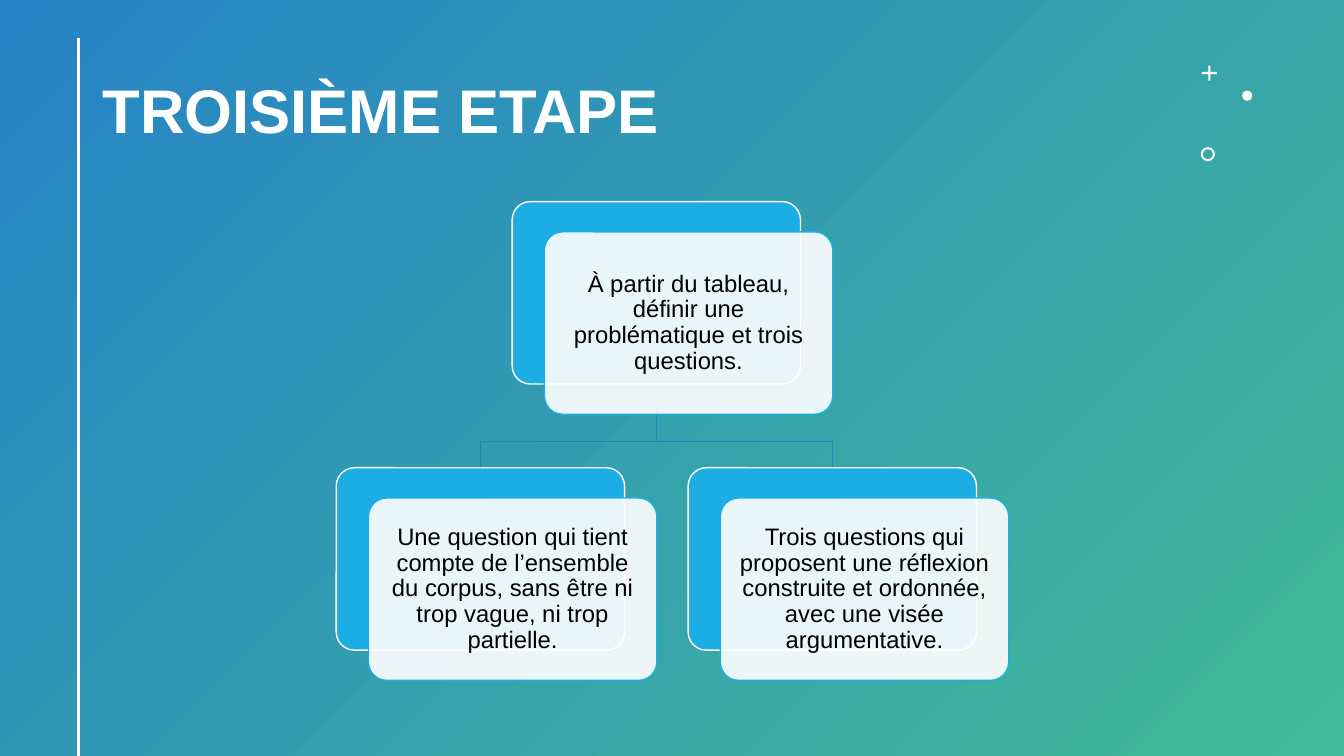
from lxml import etree
from pptx import Presentation
from pptx.dml.color import RGBColor
from pptx.enum.shapes import MSO_CONNECTOR, MSO_SHAPE as SHAPE
from pptx.enum.text import MSO_ANCHOR, PP_ALIGN
from pptx.oxml.ns import qn
from pptx.util import Inches, Pt

# Content
TITLE = "TROISIÈME ETAPE"
ROOT = "À partir du tableau, définir une problématique et trois questions."
CHILDREN = [
    "Une question qui tient compte de l’ensemble du corpus, sans être ni "
    "trop vague, ni trop partielle.",
    "Trois questions qui proposent une réflexion construite et ordonnée, "
    "avec une visée argumentative.",
]
# Small ornaments: shape, left, top, size, adjustment
ORNAMENTS = [
    (SHAPE.CROSS, 11.92, 0.65, 0.15, 0.43),
    (SHAPE.OVAL, 12.32, 0.9, 0.1, None),
    (SHAPE.DONUT, 11.91, 1.46, 0.14, 0.14),
]

# Style
FONT = "Arial"
WHITE = RGBColor(0xFF, 0xFF, 0xFF)
BLACK = RGBColor(0x00, 0x00, 0x00)
BLUE = RGBColor(0x26, 0x83, 0xC6)
GREEN = RGBColor(0x42, 0xBA, 0x97)
CYAN = RGBColor(0x1C, 0xAD, 0xE4)
BRANCH = RGBColor(0x16, 0x8B, 0xB7)

# Layout, in inches
SLIDE_W, SLIDE_H = 13.33, 7.5
CARD_W, CARD_H = 2.86, 1.81
CARD_SHIFT_X, CARD_SHIFT_Y = 0.32, 0.3
ROOT_X, ROOT_Y = 5.08, 2.0
CHILD_Y, CHILD_STEP = 4.64, 3.49
BRANCH_Y = 4.38

prs = Presentation()
prs.slide_width, prs.slide_height = Inches(SLIDE_W), Inches(SLIDE_H)
slide = prs.slides.add_slide(prs.slide_layouts[6])
shapes = slide.shapes


def add_box(kind, x, y, w, h, fill=None, line=None, adj=None):
    box = shapes.add_shape(kind, Inches(x), Inches(y), Inches(w), Inches(h))
    box.shadow.inherit = False
    if adj is not None:
        box.adjustments[0] = adj
    if fill is not None:
        box.fill.solid()
        box.fill.fore_color.rgb = fill
    if line is None:
        box.line.fill.background()
    else:
        box.line.color.rgb = line
        box.line.width = Pt(1)
    return box


def write(shape, text, size, color, bold=False, align=PP_ALIGN.LEFT, inset=0.1):
    frame = shape.text_frame
    frame.word_wrap = True
    frame.vertical_anchor = MSO_ANCHOR.MIDDLE
    frame.margin_left = frame.margin_right = Inches(inset)
    frame.margin_top = frame.margin_bottom = Inches(min(inset, 0.07))
    paragraph = frame.paragraphs[0]
    paragraph.alignment = align
    paragraph.line_spacing = 0.9
    run = paragraph.add_run()
    run.text = text
    run.font.name, run.font.size = FONT, Pt(size)
    run.font.bold, run.font.color.rgb = bold, color


def add_branch(start_x, end_x):
    points = [(start_x, BRANCH_Y), (end_x, BRANCH_Y), (end_x, CHILD_Y)]
    builder = shapes.build_freeform(Inches(start_x), Inches(ROOT_Y + CARD_H))
    builder.add_line_segments([(Inches(x), Inches(y)) for x, y in points], close=False)
    branch = builder.convert_to_shape()
    branch.shadow.inherit = False
    branch.fill.background()
    branch.line.color.rgb = BRANCH
    branch.line.width = Pt(1)


def add_card(x, y, text):
    add_box(SHAPE.ROUNDED_RECTANGLE, x, y, CARD_W, CARD_H, CYAN, WHITE, 0.1)
    front = add_box(SHAPE.ROUNDED_RECTANGLE, x + CARD_SHIFT_X, y + CARD_SHIFT_Y,
                    CARD_W, CARD_H, WHITE, CYAN, 0.1)
    fill_color = front.fill._xPr.find(qn("a:solidFill"))[0]
    etree.SubElement(fill_color, qn("a:alpha"), val="90000")
    write(front, text, 17, BLACK, align=PP_ALIGN.CENTER, inset=0.07)


# Gradient background
backdrop = add_box(SHAPE.RECTANGLE, 0, 0, SLIDE_W, SLIDE_H)
backdrop.fill.gradient()
backdrop.fill.gradient_angle = 315
for stop, color in zip(backdrop.fill.gradient_stops, (BLUE, GREEN)):
    stop.color.rgb = color

# Title and side rule
title = shapes.add_textbox(Inches(0.92), Inches(0.4), Inches(10.72), Inches(1.45))
write(title, TITLE, 44, WHITE, bold=True)
side_rule = shapes.add_connector(MSO_CONNECTOR.STRAIGHT, Inches(0.78), Inches(0.38),
                                 Inches(0.78), Inches(SLIDE_H))
side_rule.line.color.rgb = WHITE
side_rule.line.width = Pt(2)
etree.SubElement(side_rule._element.spPr, qn("a:effectLst"))

# Ornaments
for kind, x, y, size, adj in ORNAMENTS:
    add_box(kind, x, y, size, size, WHITE, adj=adj)

# Hierarchy: branches behind, then cards, children centred under the root
first_x = ROOT_X - CHILD_STEP * (len(CHILDREN) - 1) / 2
child_xs = [first_x + i * CHILD_STEP for i in range(len(CHILDREN))]
for child_x in child_xs:
    add_branch(ROOT_X + CARD_W / 2, child_x + CARD_W / 2)
add_card(ROOT_X, ROOT_Y, ROOT)
for child_x, question in zip(child_xs, CHILDREN):
    add_card(child_x, CHILD_Y, question)

prs.save("out.pptx")
